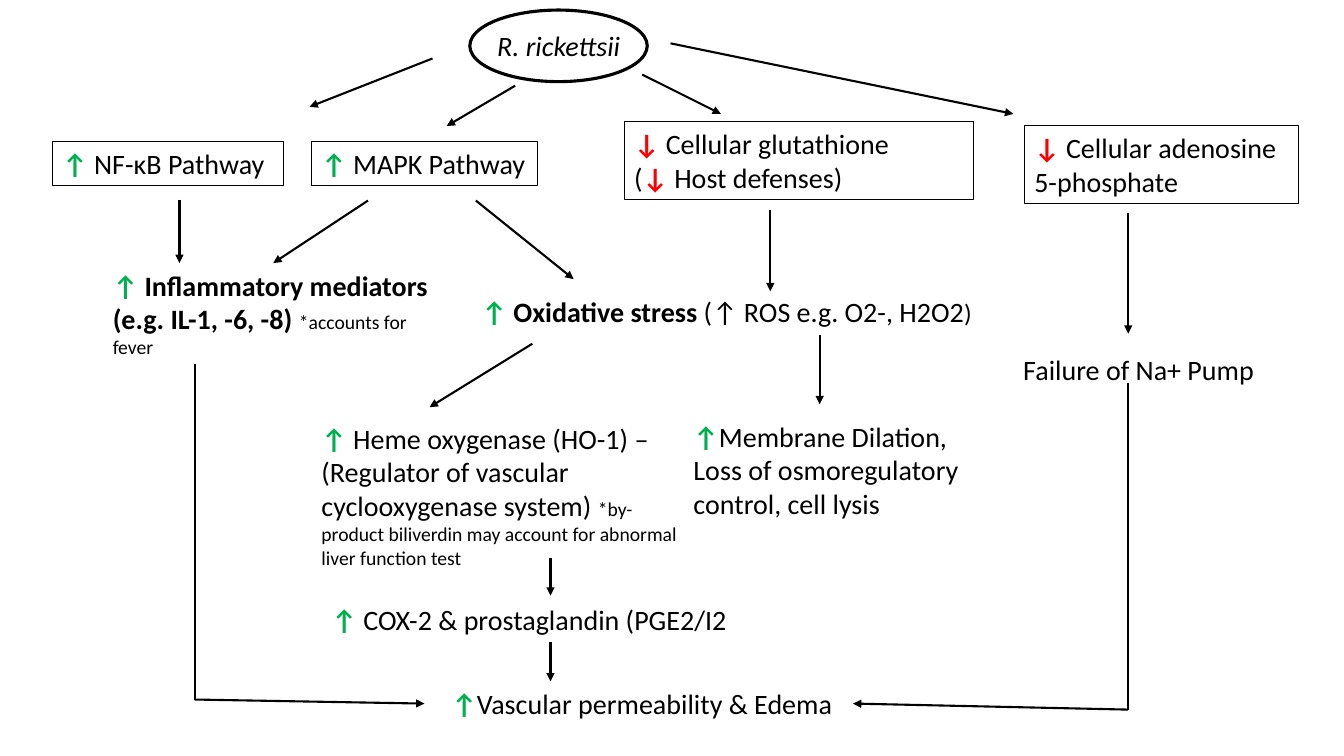
from lxml import etree
from pptx import Presentation
from pptx.dml.color import RGBColor
from pptx.enum import shapes, text
from pptx.oxml.ns import qn
from pptx.util import Inches, Pt

BLACK = RGBColor(0, 0, 0)
WHITE = RGBColor(255, 255, 255)
GREEN = RGBColor(0, 176, 80)
RED = RGBColor(255, 0, 0)

# Each run is (words, colour, bold, size)
UP = ("↑", GREEN, True, 20)
UP_GAP = ("↑ ", GREEN, True, 20)
DOWN = ("↓", RED, True, 20)
DOWN_GAP = ("↓ ", RED, True, 20)


def plain(words, size=20):
    return words, BLACK, False, size


def bold(words):
    return words, BLACK, True, 20


def write(shape, runs, italic=False):
    """Fill a shape with left-aligned runs; a newline becomes a line break."""
    frame = shape.text_frame
    frame.word_wrap = True
    frame.auto_size = text.MSO_AUTO_SIZE.NONE
    frame.vertical_anchor = text.MSO_ANCHOR.TOP
    para = frame.paragraphs[0]
    para.alignment = text.PP_ALIGN.LEFT
    for words, color, heavy, size in runs:
        for i, part in enumerate(words.split("\n")):
            if i:
                para.add_line_break()
            run = para.add_run()
            run.text = part
            font = run.font
            font.name, font.size = "Calibri", Pt(size)
            font.bold, font.italic = heavy, italic
            font.color.rgb = color


def spot(box, place):
    """Turn left, top, width, height within a box into slide lengths."""
    left, top, wide, high = place
    return [Inches(n) for n in (box[0] + left, box[1] + top, wide, high)]


def note(slide, box, place, *runs):
    write(slide.shapes.add_textbox(*spot(box, place)), runs)


def outline(slide, kind, box, place, width):
    shape = slide.shapes.add_shape(kind, *spot(box, place))
    shape.shadow.inherit = False
    shape.fill.background()
    shape.line.color.rgb = BLACK
    shape.line.width = Pt(width)
    return shape


def frame(slide, box, place, *runs):
    rect = shapes.MSO_SHAPE.RECTANGLE
    write(outline(slide, rect, box, place, 0.75), runs)


def link(slide, box, ends, head=True):
    """Draw a line between two points within a box, with an arrowhead or not."""
    x1, y1, x2, y2 = ends
    left, top = box
    line = slide.shapes.add_connector(
        shapes.MSO_CONNECTOR.STRAIGHT,
        Inches(left + x1), Inches(top + y1),
        Inches(left + x2), Inches(top + y2))
    line.line.color.rgb = BLACK
    line.line.width = Pt(1.5)
    if head:
        tail = etree.SubElement(line.line._get_or_add_ln(), qn("a:tailEnd"))
        tail.set("type", "triangle")
    etree.SubElement(line._element.spPr, qn("a:effectLst"))


def links(slide, box, *group):
    for ends in group:
        link(slide, box, ends)


def agent(slide, box):
    title = slide.shapes.title
    title.left, title.top, title.width, title.height = spot(
        box, (1.76, 0.13, 1.66, 0.44))
    title.line.color.rgb = WHITE
    title.line.width = Pt(0.75)
    write(title, [plain("R. rickettsii")], italic=True)
    outline(slide, shapes.MSO_SHAPE.OVAL, box, (1.59, 0, 1.76, 0.71), 2.25)
    links(slide, box, (1.22, 0.48, 0, 0.96), (2.04, 0.75, 1.36, 1.15),
          (3.58, 0.33, 6.98, 1.03), (3.3, 0.64, 4.08, 1.03))


def pathways(slide, box):
    frame(slide, box, (0, 0.19, 2.29, 0.44), UP, plain(" NF-κB Pathway"))
    frame(slide, box, (2.57, 0.19, 2.24, 0.44), UP, plain(" MAPK Pathway"))
    frame(slide, box, (5.67, 0, 3.47, 0.77), DOWN_GAP,
          plain("Cellular glutathione \n("), DOWN_GAP,
          plain("Host defenses)"))
    frame(slide, box, (9.64, 0.04, 2.72, 0.77), DOWN,
          plain(" Cellular adenosine 5-phosphate"))
    links(slide, box, (1.26, 0.77, 1.26, 1.4), (3.13, 0.78, 2.19, 1.4),
          (4.2, 0.78, 5.17, 1.56), (7.12, 0.87, 7.12, 1.68),
          (10.67, 0.9, 10.67, 2.1))


def effects(slide, box):
    note(slide, box, (0, 0, 3.39, 1), UP_GAP,
         bold("Inflammatory mediators \n(e.g. IL-1, -6, -8) "),
         plain("*accounts for fever", 14))
    note(slide, box, (3.66, 0.26, 5.1, 0.74), UP_GAP,
         bold("Oxidative stress"), plain(" (↑ ROS e.g. O2-, H2O2"),
         plain(")", 18))
    note(slide, box, (9.03, 0.84, 2.51, 0.44), plain("Failure of Na+ Pump"))
    links(slide, box, (4.26, 0.8, 3.24, 1.43), (7.11, 0.71, 7.11, 1.4))


def damage(slide, box):
    note(slide, box, (3.69, 0, 2.84, 1.11), UP,
         plain("Membrane Dilation, Loss of osmoregulatory control, cell lysis"))
    note(slide, box, (0, 0.02, 3.84, 1.58), UP_GAP,
         plain("Heme oxygenase (HO-1) – (Regulator of vascular "
               "cyclooxygenase system) "),
         plain("*by-product biliverdin may account for abnormal "
               "liver function test", 14))
    note(slide, box, (0.1, 1.82, 4.91, 0.44), UP,
         plain(" COX-2 & prostaglandin (PGE2/I2"))
    links(slide, box, (2.37, 1.43, 2.37, 1.8), (2.37, 2.26, 2.37, 2.65))


def outcome(slide, box):
    note(slide, box, (2.45, 3.15, 4.08, 0.44), UP,
         plain("Vascular permeability & Edema"))
    link(slide, box, (0, 0, 0, 3.33), head=False)
    link(slide, box, (9.26, 0.19, 9.26, 3.43), head=False)
    links(slide, box, (0, 3.33, 2.28, 3.37), (9.26, 3.43, 6.53, 3.37))


def main():
    deck = Presentation()
    deck.slide_width, deck.slide_height = Inches(13.33), Inches(7.5)
    slide = deck.slides.add_slide(deck.slide_layouts.get_by_name("Title Only"))
    agent(slide, (3.07, 0.1))
    pathways(slide, (0.52, 1.21))
    effects(slide, (1.02, 2.61))
    damage(slide, (3.09, 4.11))
    outcome(slide, (1.93, 3.61))
    deck.save("out.pptx")


if __name__ == "__main__":
    main()
